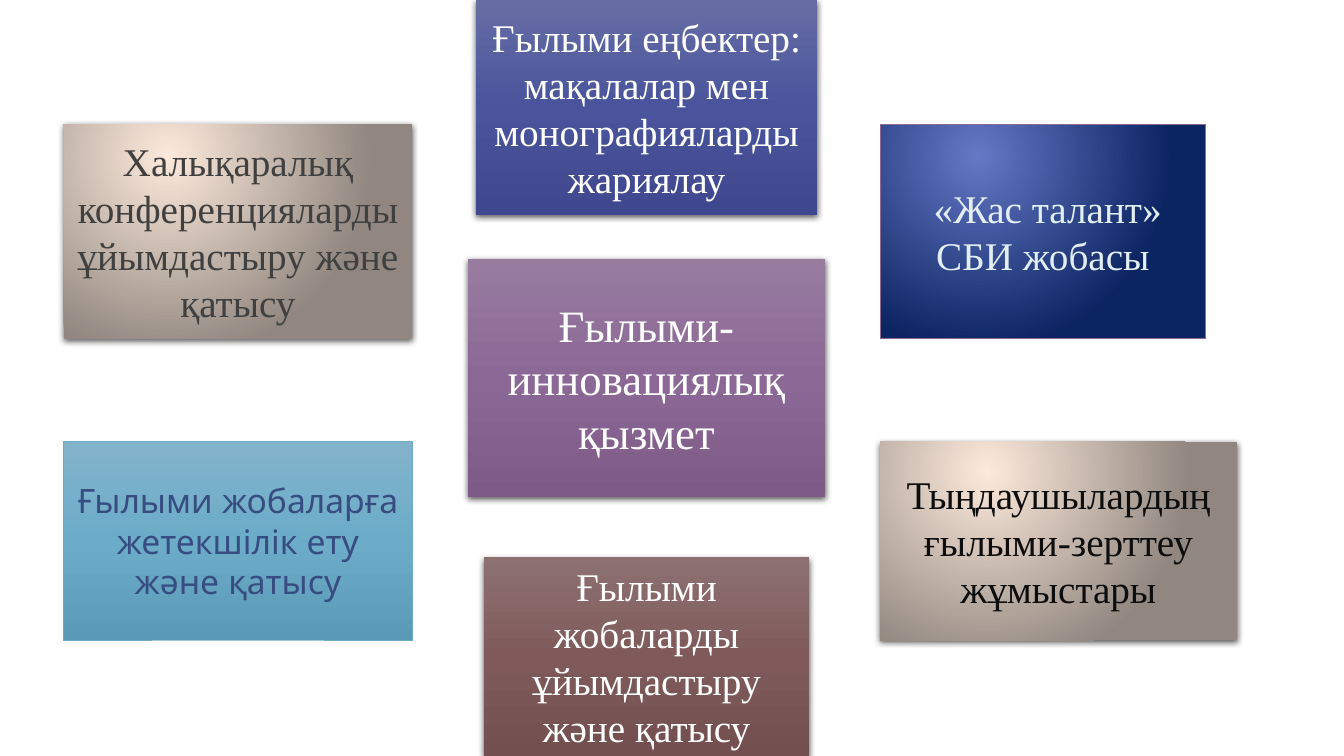
from lxml.etree import SubElement
from pptx import Presentation
from pptx.dml.color import RGBColor
from pptx.enum.shapes import MSO_SHAPE
from pptx.enum.text import MSO_ANCHOR, PP_ALIGN
from pptx.oxml.ns import qn
from pptx.util import Pt

COLORS = {
    "cream": "FCE9DB", "taupe": "918780",
    "indigo_top": "666DA4", "indigo": "4A549C", "indigo_bottom": "3F488E",
    "brown_top": "8D7171", "brown": "805A5A", "brown_bottom": "734F4F",
    "sky_top": "82B3CB", "sky": "6CACC8", "sky_bottom": "5B9AB7",
    "plum_top": "987CA0", "plum": "8C6896", "plum_bottom": "7E5A87",
    "blue": "6578C5", "navy": "0B2462",
    "sky_line": "70AAC4", "plum_line": "8B6A94", "shadow": "000000",
    "white": "FFFFFF", "gray": "404040", "slate": "374C81",
    "ice": "E2EEF3", "ink": "0D0D0D",
}
GRADIENTS = {
    "stone": ("cream", "taupe"),
    "night": ("blue", "navy"),
    "indigo": ("indigo_top", "indigo", "indigo_bottom"),
    "brown": ("brown_top", "brown", "brown_bottom"),
    "sky": ("sky_top", "sky", "sky_bottom"),
    "plum": ("plum_top", "plum", "plum_bottom"),
}
SERIF, SANS = "Times New Roman", "Quicksand"
SLIDE_WIDTH, SLIDE_HEIGHT = 960, 540
LEFT_EDGE, MIDDLE_CENTER, RIGHT_EDGE = 45.4, 461.8, 628.6
TALL, SHORT, CENTRAL = 153.4, 141.8, 169.9
TOP, UPPER, CENTER, LOWER, BOTTOM = 0, 88.6, 185, 315.4, SLIDE_HEIGHT - SHORT

CARDS = [
    ("Халықаралық конференцияларды ұйымдастыру және қатысу",
     "left", UPPER, 249.1, TALL, "stone", None, SERIF, 28, "gray"),
    ("Ғылыми еңбектер: мақалалар мен монографияларды жариялау",
     "middle", TOP, 244.1, TALL, "indigo", None, SERIF, 28, "white"),
    ("Ғылыми жобаларды ұйымдастыру және қатысу",
     "middle", BOTTOM, 232.6, SHORT, "brown", None, SERIF, 28, "white"),
    ("Ғылыми жобаларға жетекшілік ету және қатысу",
     "left", LOWER, 249.1, SHORT, "sky", "sky_line", SANS, 24, "slate"),
    ("Ғылыми-инновациялық қызмет",
     "middle", CENTER, 254.9, CENTRAL, "plum", None, SERIF, 32, "white"),
    (" «Жас талант» СБИ жобасы",
     "right", UPPER, 232.6, TALL, "night", "plum_line", SERIF, 28, "ice"),
    ("Тыңдаушылардың ғылыми-зерттеу жұмыстары",
     "right", LOWER, 254.9, SHORT, "stone", None, SERIF, 28, "ink"),
]


def add_element(parent, tag, **attributes):
    """Append a DrawingML element with the given attributes."""
    return SubElement(parent, qn(f"a:{tag}"), attributes)


def fill_gradient(shape, names):
    """Fill with a vertical gradient of three colours or a radial one of two."""
    shape.fill.background()
    properties = shape.element.spPr
    gradient = add_element(properties, "gradFill", rotWithShape="1")
    properties.replace(properties.find(qn("a:noFill")), gradient)
    stops = add_element(gradient, "gsLst")
    for index, name in enumerate(names):
        position = 100000 * index // (len(names) - 1)
        stop = add_element(stops, "gs", pos=str(position))
        add_element(stop, "srgbClr", val=COLORS[name])
    if len(names) == 3:
        add_element(gradient, "lin", ang="5400000", scaled="0")
    else:
        circle = add_element(gradient, "path", path="circle")
        add_element(circle, "fillToRect", l="30000", t="30000", r="70000", b="100000")


def add_shadow(shape):
    """Drop a soft shadow straight below the card."""
    effects = shape.element.spPr.find(qn("a:effectLst"))
    shadow = add_element(effects, "outerShdw", blurRad=str(Pt(4.5)), dist=str(Pt(1.5)),
                         dir="5400000", algn="ctr", rotWithShape="0")
    color = add_element(shadow, "srgbClr", val=COLORS["shadow"])
    add_element(color, "alpha", val="63000")


def add_card(slide, text, column, top, width, height, gradient, line, font_name, size, color):
    """Draw one card in its column."""
    left = {"left": LEFT_EDGE, "middle": MIDDLE_CENTER - width / 2, "right": RIGHT_EDGE}[column]
    shape = slide.shapes.add_shape(
        MSO_SHAPE.RECTANGLE, Pt(left), Pt(top), Pt(width), Pt(height))
    fill_gradient(shape, GRADIENTS[gradient])
    shape.shadow.inherit = False
    if line:
        shape.line.color.rgb = RGBColor.from_string(COLORS[line])
        shape.line.width = Pt(0.5)
    else:
        shape.line.fill.background()
        add_shadow(shape)
    frame = shape.text_frame
    frame.word_wrap = True
    frame.vertical_anchor = MSO_ANCHOR.MIDDLE
    paragraph = frame.paragraphs[0]
    paragraph.text = text
    paragraph.alignment = PP_ALIGN.CENTER
    paragraph.font.name = font_name
    paragraph.font.size = Pt(size)
    paragraph.font.color.rgb = RGBColor.from_string(COLORS[color])


def main():
    """Build the slide of research activities."""
    presentation = Presentation()
    presentation.slide_width = Pt(SLIDE_WIDTH)
    presentation.slide_height = Pt(SLIDE_HEIGHT)
    slide = presentation.slides.add_slide(presentation.slide_layouts[6])
    for card in CARDS:
        add_card(slide, *card)
    presentation.save("out.pptx")


if __name__ == "__main__":
    main()
